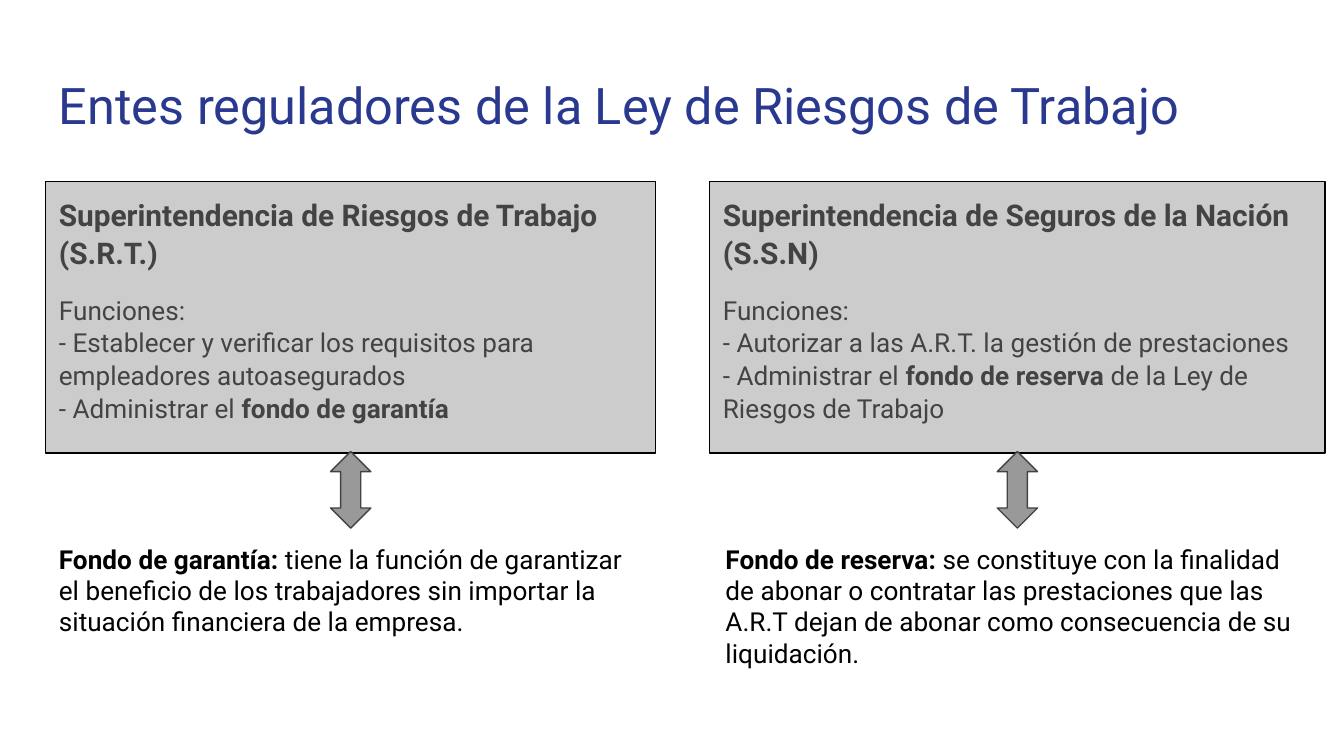
from pptx import Presentation
from pptx.dml.color import RGBColor
from pptx.enum.shapes import MSO_SHAPE as Shape
from pptx.enum.text import MSO_ANCHOR as Anchor, PP_ALIGN as Align
from pptx.util import Inches, Pt

FONT = "Roboto"
BLUE = RGBColor(0x2A, 0x39, 0x90)
DARK_GRAY = RGBColor(0x43, 0x43, 0x43)
MID_GRAY = RGBColor(0x99, 0x99, 0x99)
LIGHT_GRAY = RGBColor(0xCC, 0xCC, 0xCC)
BLACK = RGBColor(0, 0, 0)

REGULATORS = [
    {
        "left": 0.34, "width": 4.54, "arrow_left": 2.46, "fund_left": 0.34, "fund_height": 0.92,
        "name": "Superintendencia de Riesgos de Trabajo (S.R.T.)",
        "functions": [
            ("Funciones:\n- Establecer y verificar los requisitos para empleadores autoasegurados\n"
             "- Administrar el ", False),
            ("fondo de garantía", True),
        ],
        "fund": [
            ("Fondo de garantía:", True),
            (" tiene la función de garantizar el beneficio de los trabajadores "
             "sin importar la situación financiera de la empresa.", False),
        ],
    },
    {
        "left": 5.28, "width": 4.58, "arrow_left": 7.42, "fund_left": 5.3, "fund_height": 1.17,
        "name": "Superintendencia de Seguros de la Nación (S.S.N)",
        "functions": [
            ("Funciones:\n- Autorizar a las A.R.T. la gestión de prestaciones\n"
             "- Administrar el ", False),
            ("fondo de reserva", True),
            (" de la Ley de Riesgos de Trabajo", False),
        ],
        "fund": [
            ("Fondo de reserva: ", True),
            ("se constituye con la finalidad de abonar o contratar las prestaciones que las "
             "A.R.T dejan de abonar como consecuencia de su liquidación.", False),
        ],
    },
]


def prepare_frame(shape):
    """Wrap the text of a shape from its top left corner and return its frame."""
    frame = shape.text_frame
    frame.word_wrap = True
    frame.vertical_anchor = Anchor.TOP
    frame.margin_left = frame.margin_right = Inches(0.1)
    frame.margin_top = frame.margin_bottom = Inches(0.1)
    return frame


def write_runs(paragraph, runs, size, color):
    """Write (text, bold) runs into a paragraph, with line breaks at newlines."""
    paragraph.alignment = Align.LEFT
    for text, bold in runs:
        for index, line in enumerate(text.split("\n")):
            if index:
                paragraph.add_line_break()
            run = paragraph.add_run()
            run.text = line
            run.font.name = FONT
            run.font.size = Pt(size)
            run.font.bold = bold
            run.font.color.rgb = color


def add_text(slide, left, top, width, height, runs, size, color):
    """Add a text box with one paragraph."""
    box = slide.shapes.add_textbox(Inches(left), Inches(top), Inches(width), Inches(height))
    write_runs(prepare_frame(box).paragraphs[0], runs, size, color)


def add_filled_shape(slide, kind, left, top, width, height, fill, line):
    """Add a flat preset shape with a thin outline."""
    shape = slide.shapes.add_shape(kind, Inches(left), Inches(top), Inches(width), Inches(height))
    shape.shadow.inherit = False
    shape.fill.solid()
    shape.fill.fore_color.rgb = fill
    shape.line.color.rgb = line
    shape.line.width = Pt(0.75)
    return shape


def add_regulator(slide, regulator):
    """Add a regulator's panel, its arrow and the description of its fund."""
    panel = add_filled_shape(slide, Shape.RECTANGLE, regulator["left"], 1.35,
                             regulator["width"], 2.02, LIGHT_GRAY, BLACK)
    frame = prepare_frame(panel)
    heading, functions = frame.paragraphs[0], frame.add_paragraph()
    heading.line_spacing = functions.line_spacing = 1.05
    functions.space_before = functions.space_after = Pt(12)
    write_runs(heading, [(regulator["name"], True)], 16, DARK_GRAY)
    write_runs(functions, regulator["functions"], 14, DARK_GRAY)
    add_filled_shape(slide, Shape.UP_DOWN_ARROW, regulator["arrow_left"], 3.36,
                     0.3, 0.57, MID_GRAY, DARK_GRAY)
    add_text(slide, regulator["fund_left"], 3.94, 4.54, regulator["fund_height"],
             regulator["fund"], 14, BLACK)


def main():
    """Build the widescreen slide and save it."""
    presentation = Presentation()
    presentation.slide_width = Inches(10)
    presentation.slide_height = presentation.slide_width * 9 // 16
    slide = presentation.slides.add_slide(presentation.slide_layouts[6])
    add_text(slide, 0.34, 0.45, 9.32, 0.66,
             [("Entes reguladores de la Ley de Riesgos de Trabajo", False)], 27, BLUE)
    for regulator in REGULATORS:
        add_regulator(slide, regulator)
    presentation.save("out.pptx")


if __name__ == "__main__":
    main()
